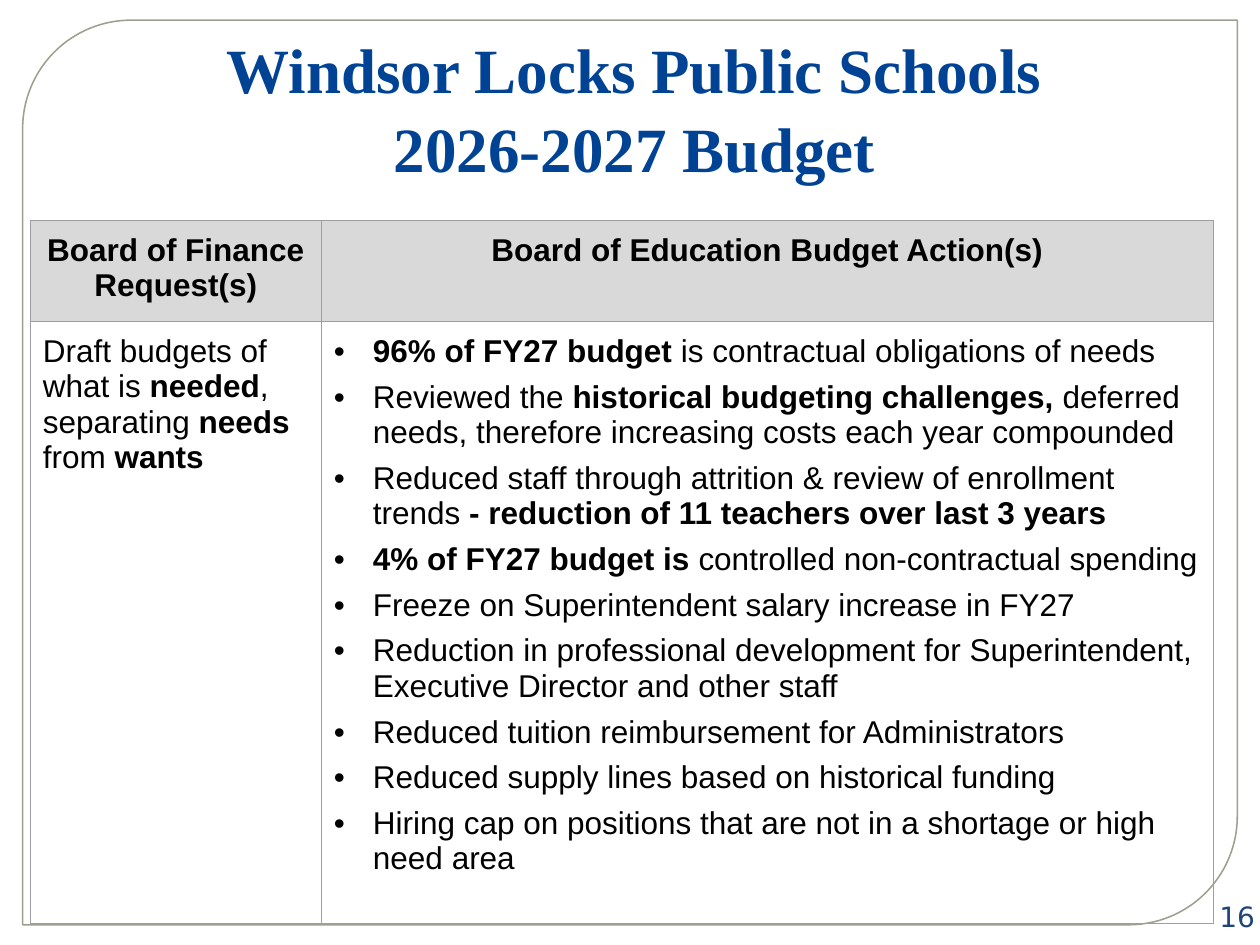
from dataclasses import dataclass

from lxml.etree import SubElement as Sub
from pptx import Presentation
from pptx.dml.color import RGBColor as RGB
from pptx.enum.shapes import MSO_SHAPE as Shape
from pptx.enum.text import MSO_ANCHOR as Anchor, MSO_AUTO_SIZE as Fit, PP_ALIGN as Align
from pptx.oxml.ns import qn
from pptx.util import Inches, Pt


@dataclass(frozen=True)
class Theme:
    navy: str = "004395"
    page: str = "1E4677"
    ink: str = "000000"
    head: str = "D9D9D9"
    rule: str = "9E9E9E"
    edge: str = "9D9F8F"
    serif: str = "Times New Roman"
    sans: str = "Arial"
    mono: str = "DejaVu Sans"
    big: int = 36
    body: int = 18
    small: int = 16


T = Theme()
COLS = (2.31, 7.08)
ROWS = (0.8, 4.78)
HEADS = ("Board of Finance Request(s)", "Board of Education Budget Action(s)")
# Text between asterisks is bold.
ASK = "Draft budgets of what is *needed*, separating *needs *from *wants*"
ACTS = (
    "*96% of FY27 budget* is contractual obligations of needs",
    "Reviewed the *historical budgeting challenges,* deferred needs, "
    "therefore increasing costs each year compounded",
    "Reduced staff through attrition & review of enrollment trends "
    "*- reduction of 11 teachers over last 3 years*",
    "*4% of FY27 budget is *controlled non-contractual spending",
    "Freeze on Superintendent salary increase in FY27",
    "Reduction in professional development for Superintendent, "
    "Executive Director and other staff",
    "Reduced tuition reimbursement for Administrators",
    "Reduced supply lines based on historical funding",
    "Hiring cap on positions that are not in a shortage or high need area",
)


def add_run(para, text, face, size, color, bold=False):
    run = para.add_run()
    run.text = text
    font = run.font
    font.name, font.size, font.bold = face, Pt(size), bold
    font.color.rgb = RGB.from_string(color)


def add_rich(para, text):
    """Add runs, with every second part between asterisks in bold."""
    for i, part in enumerate(text.split("*")):
        if part:
            add_run(para, part, T.sans, T.body, T.ink, i % 2 == 1)


def add_frame(slide):
    box = slide.shapes.add_shape(
        Shape.ROUND_2_DIAG_RECTANGLE, *map(Inches, (0.18, 0.16, 9.64, 7.18)))
    box.adjustments[0] = 0.12
    box.shadow.inherit = False
    box.fill.background()
    box.line.color.rgb = RGB.from_string(T.edge)
    box.line.width = Pt(0.87)


def set_title(slide, *lines):
    title = slide.shapes.title
    title.left, title.top, title.width, title.height = map(
        Inches, (0.1, 0.13, 9.81, 2.23))
    frame = title.text_frame
    frame.auto_size = Fit.NONE
    frame.vertical_anchor = Anchor.TOP
    frame.margin_top = Inches(0.08)
    para = frame.paragraphs[0]
    para.alignment = Align.CENTER
    para.line_spacing = 1.05
    para._p.get_or_add_pPr().set("marL", str(Inches(0.06)))
    for i, line in enumerate(lines):
        if i:
            para.add_line_break()
        add_run(para, line, T.serif, T.big, T.navy, True)


def set_bullet(para):
    props = para._p.get_or_add_pPr()
    props.set("marL", str(Inches(0.31)))
    props.set("indent", str(-Inches(0.31)))
    Sub(props, qn("a:buFont"), typeface=T.sans)
    Sub(props, qn("a:buChar"), char="•")


def style_cell(cell, fill=None):
    cell.margin_left = cell.margin_right = Inches(0.1)
    cell.margin_top = cell.margin_bottom = Inches(0.1)
    props = cell._tc.get_or_add_tcPr()
    for side in ("lnL", "lnR", "lnT", "lnB"):
        line = Sub(props, qn(f"a:{side}"), w=str(Pt(0.75)))
        Sub(Sub(line, qn("a:solidFill")), qn("a:srgbClr"), val=T.rule)
    if fill:
        cell.fill.solid()
        cell.fill.fore_color.rgb = RGB.from_string(fill)
    else:
        cell.fill.background()


def add_grid(slide):
    table = slide.shapes.add_table(
        len(ROWS), len(COLS),
        *map(Inches, (0.24, 1.75, sum(COLS), sum(ROWS)))).table
    for col, width in zip(table.columns, COLS):
        col.width = Inches(width)
    for row, height in zip(table.rows, ROWS):
        row.height = Inches(height)
    for i, head in enumerate(HEADS):
        cell = table.cell(0, i)
        style_cell(cell, T.head)
        para = cell.text_frame.paragraphs[0]
        para.alignment = Align.CENTER
        add_rich(para, f"*{head}*")
    ask, acts = table.cell(1, 0), table.cell(1, 1)
    style_cell(ask)
    style_cell(acts)
    add_rich(ask.text_frame.paragraphs[0], ASK)
    frame = acts.text_frame
    for i, act in enumerate(ACTS):
        para = frame.add_paragraph() if i else frame.paragraphs[0]
        if i < len(ACTS) - 1:
            para.space_after = Pt(6)
        set_bullet(para)
        add_rich(para, act)


def add_page(slide, number):
    box = slide.shapes.add_textbox(*map(Inches, (9.45, 7.12, 0.51, 0.3)))
    frame = box.text_frame
    frame.word_wrap = True
    frame.vertical_anchor = Anchor.MIDDLE
    frame.margin_left = frame.margin_right = 0
    frame.margin_top = frame.margin_bottom = 0
    para = frame.paragraphs[0]
    para.alignment = Align.RIGHT
    add_run(para, number, T.mono, T.small, T.page)


def main():
    deck = Presentation()
    deck.slide_width, deck.slide_height = Inches(10), Inches(7.5)
    slide = deck.slides.add_slide(deck.slide_layouts[5])
    add_frame(slide)
    add_page(slide, "16")
    set_title(slide, "Windsor Locks Public Schools", "2026-2027 Budget")
    add_grid(slide)
    deck.save("out.pptx")


if __name__ == "__main__":
    main()
